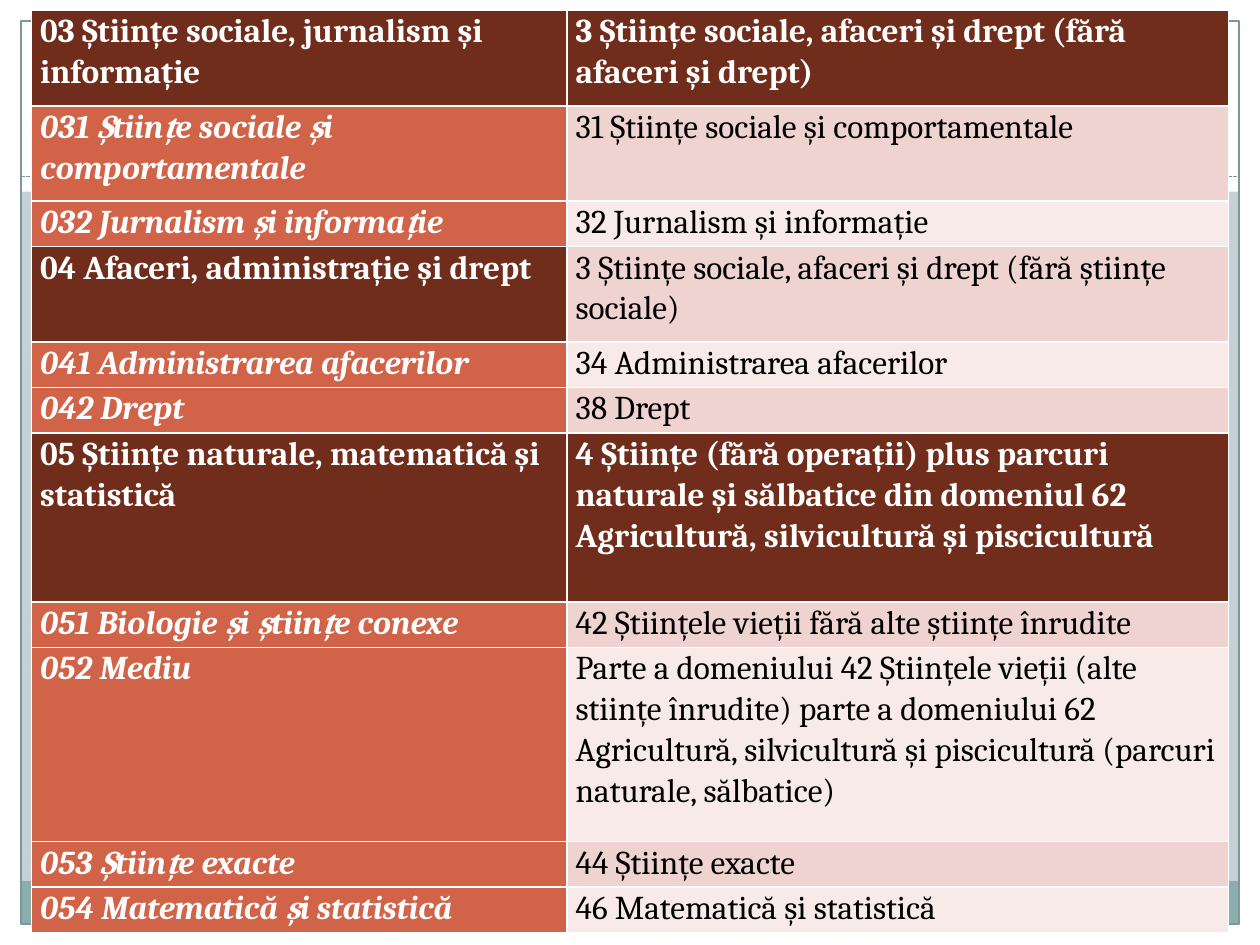
"""Build the slide that maps new study fields to the former ones."""
from lxml import etree
from pptx import Presentation
from pptx.dml import color
from pptx.enum import dml, shapes
from pptx.oxml import ns
from pptx.util import Pt

FONT = "Cambria"
WHITE, BLACK, FRAME = "FFFFFF", "000000", "7C999A"
GROUP, FIELD = "712D1C", "D16349"
BANDS = ("EED3D0", "F7EAE9")
COLUMN_WIDTHS = (306, 378)

# Height, new field, former field, whether it is a group, whether the former one is a heading
ROWS = [
    (54.5, "03 Științe sociale, jurnalism și informație",
     "3 Științe sociale, afaceri și drept (fără afaceri și drept)", True, True),
    (54.5, "031 Științe sociale și comportamentale",
     "31 Științe sociale și comportamentale", False, False),
    (26, "032 Jurnalism și informație", "32 Jurnalism și informație", False, False),
    (54.5, "04 Afaceri, administrație și drept",
     "3 Științe sociale, afaceri și drept (fără științe sociale)", True, False),
    (26, "041 Administrarea afacerilor", "34 Administrarea afacerilor", False, False),
    (26, "042 Drept", "38 Drept", False, False),
    (96.5, "05 Științe naturale, matematică și statistică",
     "4 Științe (fără operații) plus parcuri naturale și sălbatice din domeniul 62 "
     "Agricultură, silvicultură și piscicultură", True, True),
    (26, "051 Biologie și științe conexe",
     "42 Științele vieții fără alte științe înrudite", False, False),
    (111, "052 Mediu",
     "Parte a domeniului 42 Științele vieții (alte stiințe înrudite) parte a domeniului 62 "
     "Agricultură, silvicultură și piscicultură (parcuri naturale, sălbatice)", False, False),
    (26, "053 Științe exacte", "44 Științe exacte", False, False),
    (26, "054 Matematică și statistică", "46 Matematică și statistică", False, False),
]


def paint(target, value):
    """Give a fill one solid colour."""
    target.solid()
    target.fore_color.rgb = color.RGBColor.from_string(value)


def add_panel(page, left, top, width, height, fill=None, line=None):
    """Add a plain rectangle with an optional fill and outline."""
    panel = page.shapes.add_shape(
        shapes.MSO_SHAPE.RECTANGLE, Pt(left), Pt(top), Pt(width), Pt(height))
    panel.shadow.inherit = False
    if fill:
        paint(panel.fill, fill)
    else:
        panel.fill.background()
    if line:
        paint(panel.line.fill, line)
        panel.line.width = Pt(0.75)
    else:
        panel.line.fill.background()


def add_dashed_line(page, left, right, top):
    """Add a thin dashed horizontal line."""
    line = page.shapes.add_connector(
        shapes.MSO_CONNECTOR.STRAIGHT, Pt(left), Pt(top), Pt(right), Pt(top))
    paint(line.line.fill, FRAME)
    line.line.width = Pt(0.75)
    line.line.dash_style = dml.MSO_LINE.SQUARE_DOT
    etree.SubElement(line._element.spPr, ns.qn("a:effectLst"))


def add_frame(page):
    """Draw the white margins, the bottom band and the outline."""
    add_panel(page, 0, 528, 720, 12, WHITE)
    add_panel(page, 0, 0, 720, 109.5, WHITE)
    for left in (0, 708):
        add_panel(page, left, 0, 12, 540, WHITE)
    add_panel(page, 12, 503.5, 696, 24.5, "8CADAE")
    add_panel(page, 12, 12, 696, 516, line=FRAME)
    add_dashed_line(page, 12, 708, 101)


def fill_cell(cell, words, fill, ink, bold, italic):
    """Write and format one table cell."""
    cell.text = words
    cell.margin_left = cell.margin_right = Pt(5)
    cell.margin_top = cell.margin_bottom = Pt(0)
    paint(cell.fill, fill)
    para = cell.text_frame.paragraphs[0]
    para.line_spacing = 1.07
    font = para.font
    font.name, font.size = FONT, Pt(19)
    font.bold, font.italic = bold, italic
    paint(font.fill, ink)


def add_field_table(page):
    """Add the table of new and former fields."""
    height = sum(row[0] for row in ROWS)
    table = page.shapes.add_table(
        len(ROWS), 2, Pt(18), Pt(6), Pt(sum(COLUMN_WIDTHS)), Pt(height)).table
    for column, width in zip(table.columns, COLUMN_WIDTHS):
        column.width = Pt(width)
    for index, (height, new, former, group, heading) in enumerate(ROWS):
        table.rows[index].height = Pt(height)
        fill_cell(table.cell(index, 0), new, GROUP if group else FIELD, WHITE, True, not group)
        fill = GROUP if heading else BANDS[(index - 1) % 2]
        fill_cell(table.cell(index, 1), former, fill, WHITE if heading else BLACK, heading, False)


def main():
    """Build and save the deck."""
    deck = Presentation()
    deck.slide_width, deck.slide_height = Pt(720), Pt(540)
    page = deck.slides.add_slide(deck.slide_layouts[6])
    paint(page.background.fill, "C5D1D7")
    add_frame(page)
    add_field_table(page)
    deck.save("out.pptx")


if __name__ == "__main__":
    main()
